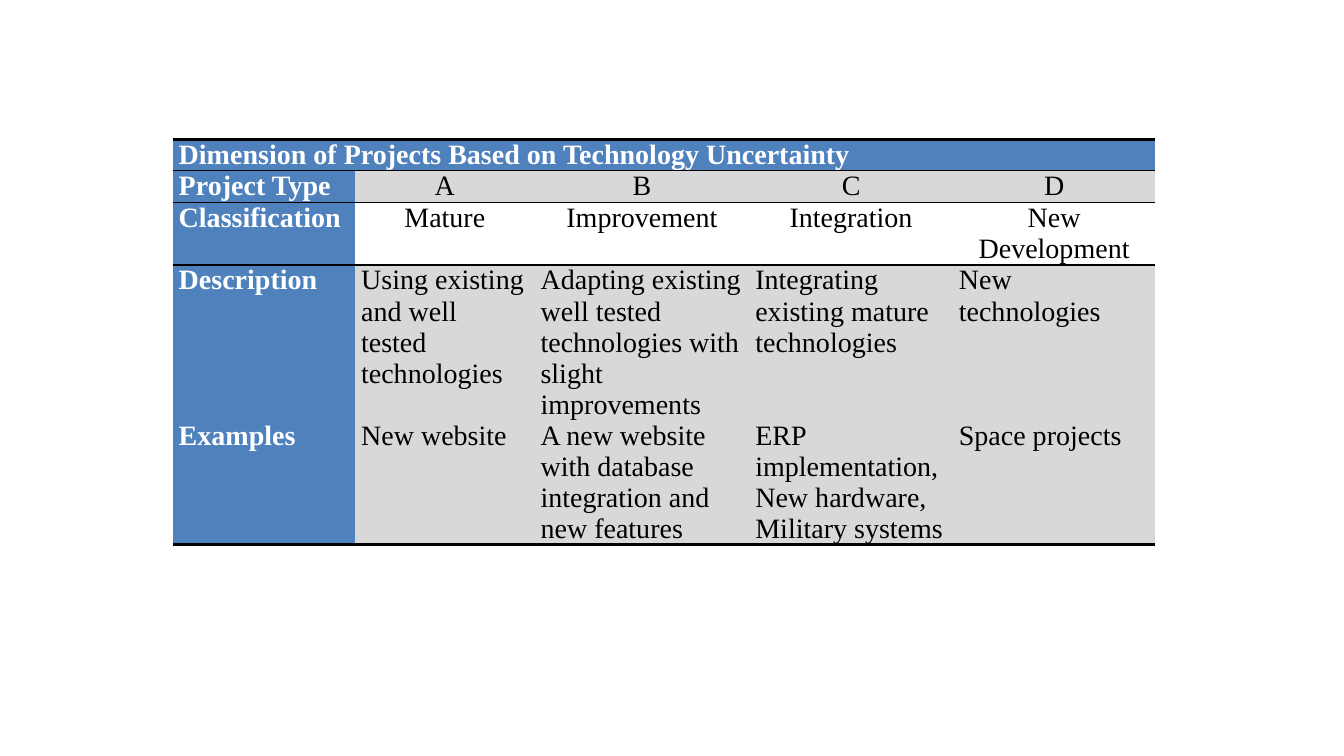
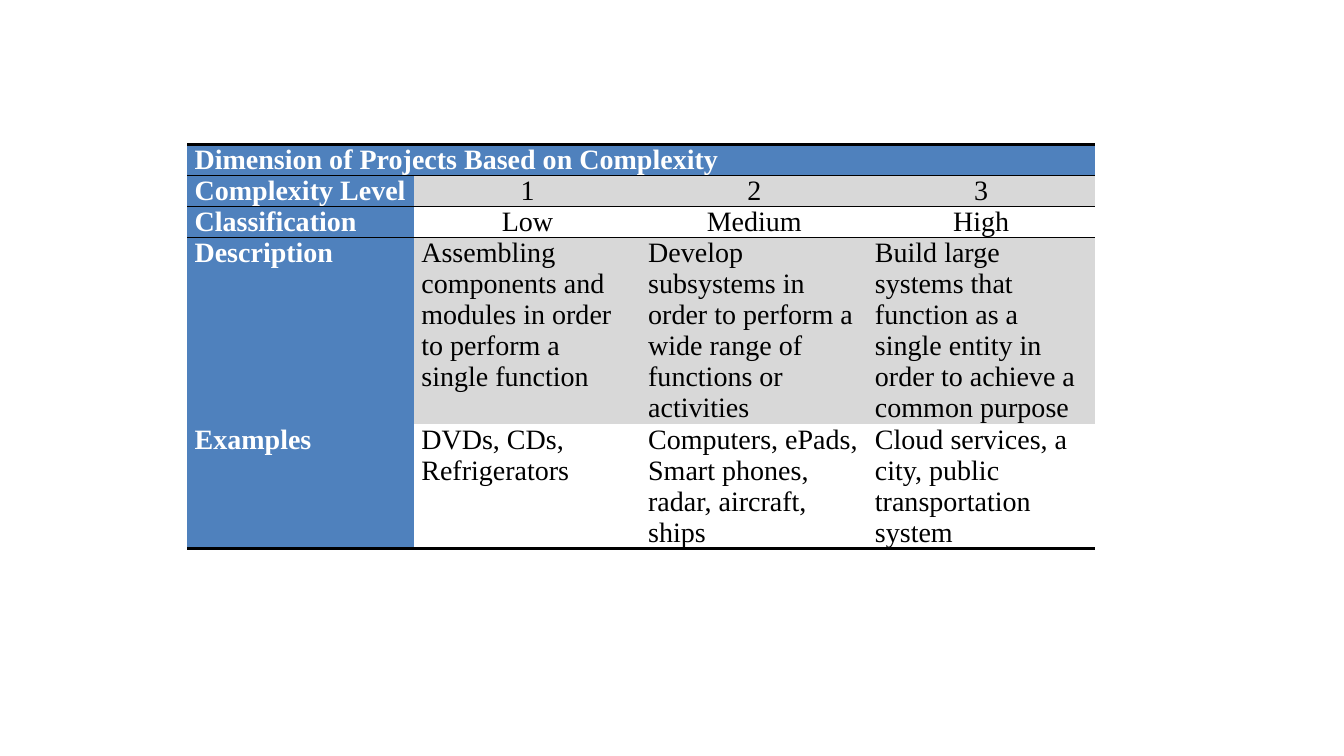
from lxml import etree
from pptx import Presentation
from pptx.dml.color import RGBColor
from pptx.enum import text
from pptx.oxml import ns
from pptx.util import Pt

BLUE, GREY, WHITE, BLACK = "4F81BD", "D8D8D8", "FFFFFF", "000000"
FONT, FONT_SIZE, LINE_HEIGHT = "Times New Roman", 20, 22
THICK, THIN = 2.25, 1
NO_STYLE_NO_GRID = "{2D5ABB26-0587-4C30-8999-92F81FD0307C}"
CENTRED_ROWS = (1, 2)
# Rules above and below each row: title, level, classification, description, examples
ROW_RULES = [(THICK, THIN), (THIN, THIN), (THIN, THIN), (THIN, None), (None, THICK)]


def color(value):
    return RGBColor.from_string(value)


def set_border(cell, side, width):
    """Draw one side of a cell, or clear it when width is None."""
    line = etree.SubElement(cell._tc.get_or_add_tcPr(), ns.qn(f"a:ln{side}"))
    if width is None:
        etree.SubElement(line, ns.qn("a:noFill"))
        return
    line.set("w", str(Pt(width)))
    fill = etree.SubElement(line, ns.qn("a:solidFill"))
    etree.SubElement(fill, ns.qn("a:srgbClr"), val=BLACK)


def style_cell(cell, rules, fill, inset):
    cell.margin_left = cell.margin_right = Pt(inset)
    cell.margin_top = cell.margin_bottom = 0
    for side, width in zip("LRTB", (None, None, *rules)):
        set_border(cell, side, width)
    if fill:
        cell.fill.solid()
        cell.fill.fore_color.rgb = color(fill)
    else:
        cell.fill.background()


def write_cell(cell, wording, heading, centred):
    cell.text = wording
    paragraph = cell.text_frame.paragraphs[0]
    paragraph.alignment = text.PP_ALIGN.CENTER if centred else text.PP_ALIGN.LEFT
    paragraph.font.name = FONT
    paragraph.font.size = Pt(FONT_SIZE)
    paragraph.font.bold = heading
    paragraph.font.color.rgb = color(WHITE if heading else BLACK)


def add_dimension_slide(presentation, left, top, widths, row_heights, inset,
                        grey_rows, title, rows):
    """Add a slide with one table: a title row, then rows led by a heading."""
    slide = presentation.slides.add_slide(presentation.slide_layouts[6])
    frame = slide.shapes.add_table(len(rows) + 1, len(widths), Pt(left), Pt(top),
                                   Pt(sum(widths)), Pt(sum(row_heights)))
    table = frame.table
    table.first_row = table.horz_banding = False
    table._tbl.tblPr.find(ns.qn("a:tableStyleId")).text = NO_STYLE_NO_GRID
    for column, width in zip(table.columns, widths):
        column.width = Pt(width)
    for row, height in zip(table.rows, row_heights):
        row.height = Pt(height)

    title_row = [title] + [""] * (len(widths) - 1)
    for row_index, wordings in enumerate([title_row, *rows]):
        for column_index, wording in enumerate(wordings):
            cell = table.cell(row_index, column_index)
            heading = row_index == 0 or column_index == 0
            fill = BLUE if heading else GREY if row_index in grey_rows else None
            style_cell(cell, ROW_RULES[row_index], fill, inset)
            write_cell(cell, wording, heading,
                       not heading and row_index in CENTRED_ROWS)
    table.cell(0, 0).merge(table.cell(0, len(widths) - 1))


def main():
    presentation = Presentation()
    presentation.slide_width, presentation.slide_height = Pt(960), Pt(540)
    add_dimension_slide(
        presentation, left=123.4, top=99.4, widths=[130.3, 128.2, 153.4, 145.4, 144.7],
        row_heights=[LINE_HEIGHT, 23.2] + [LINE_HEIGHT * lines for lines in (2, 5, 4)],
        inset=4.3, grey_rows=(1, 3, 4),
        title="Dimension of Projects Based on Technology Uncertainty",
        rows=[
            ["Project Type", "A", "B", "C", "D"],
            ["Classification", "Mature", "Improvement", "Integration",
             "New Development"],
            ["Description", "Using existing and well tested technologies",
             "Adapting existing well tested technologies with slight improvements",
             "Integrating existing mature technologies", "New technologies"],
            ["Examples", "New website",
             "A new website with database integration and new features",
             "ERP implementation, New hardware, Military systems",
             "Space projects"],
        ])
    add_dimension_slide(
        presentation, left=133.8, top=103, widths=[162] * 4,
        row_heights=[LINE_HEIGHT * lines for lines in (1, 1, 1, 6, 4)],
        inset=5.2, grey_rows=(1, 3),
        title="Dimension of Projects Based on Complexity",
        rows=[
            ["Complexity Level", "1", "2", "3"],
            ["Classification", "Low", "Medium", "High"],
            ["Description",
             "Assembling components and modules in order to perform a single function",
             "Develop subsystems in order to perform a wide range of functions "
             "or activities",
             "Build large systems that function as a single entity in order to "
             "achieve a common purpose"],
            ["Examples", "DVDs, CDs, Refrigerators",
             "Computers, ePads, Smart phones, radar, aircraft, ships",
             "Cloud services, a city, public transportation system"],
        ])
    presentation.save("out.pptx")


if __name__ == "__main__":
    main()
